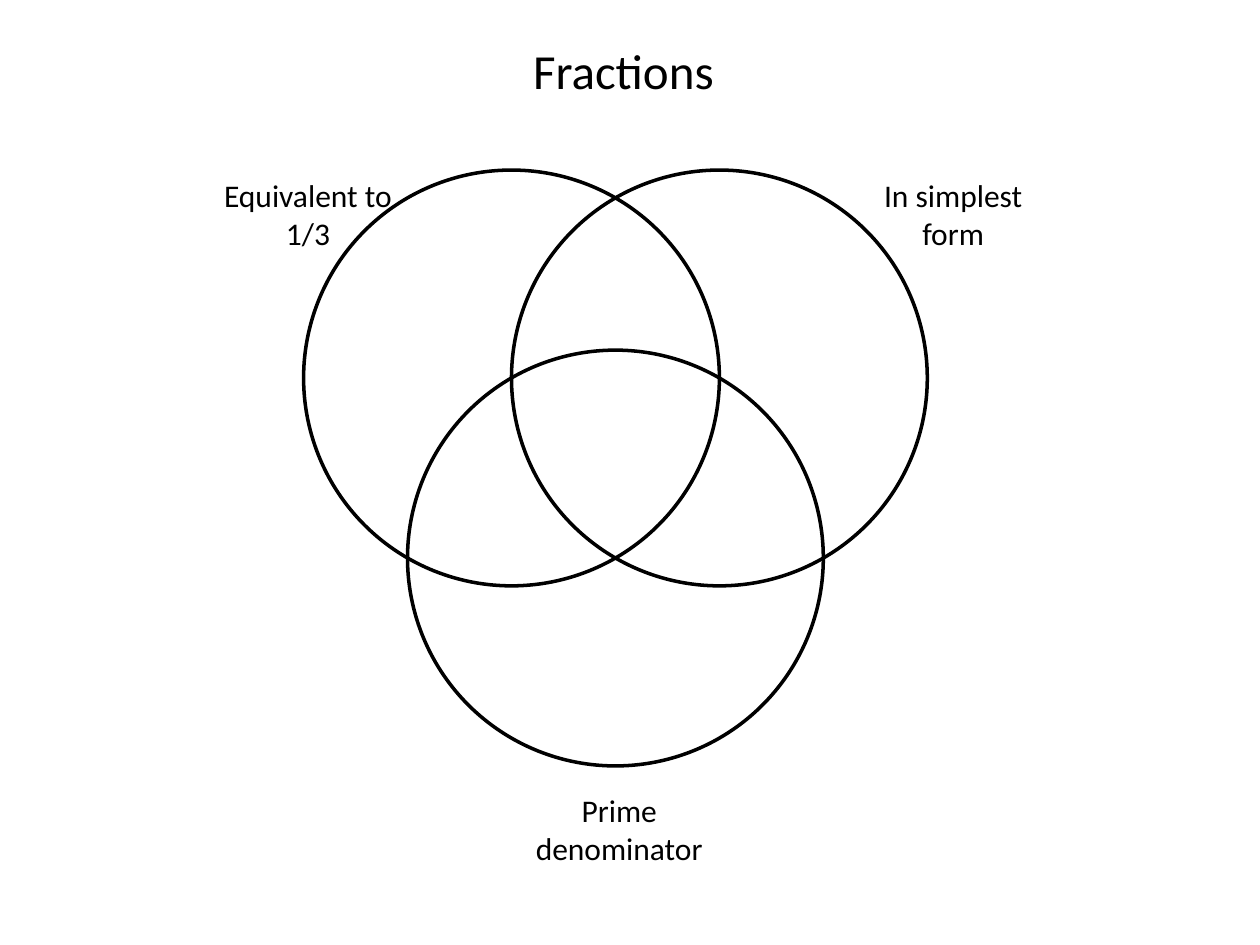
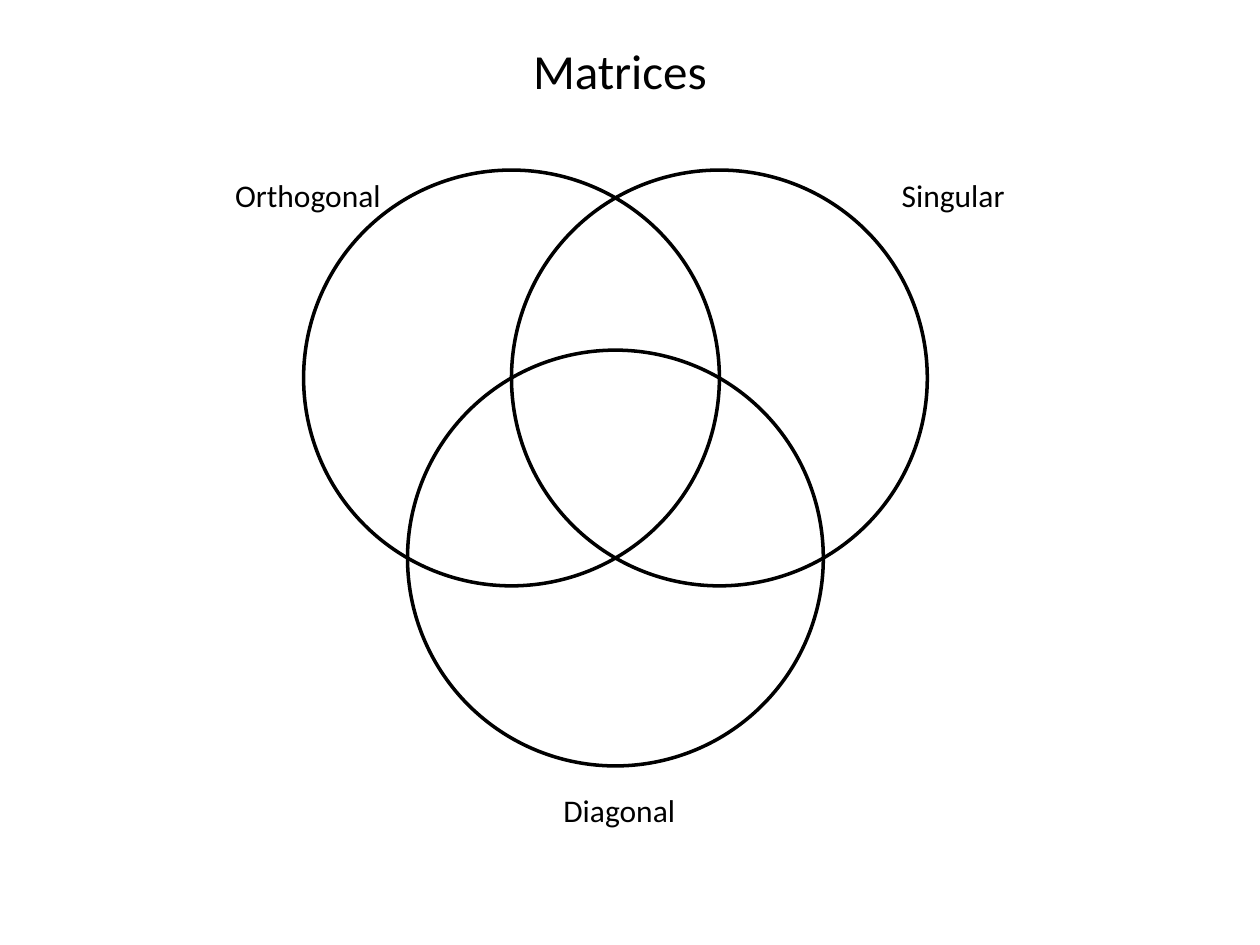
from dataclasses import dataclass
from math import sqrt

from pptx import Presentation
from pptx.dml.color import RGBColor
from pptx.enum import shapes, text
from pptx.util import Pt

DIAGRAMS = [
    {"title": "Fractions", "title_width": 118.8, "label_height": 51.1,
     "labels": ["Equivalent to 1/3", "In simplest form", "Prime denominator"]},
    {"title": "Matrices", "title_width": 115.2, "label_height": 29.1,
     "labels": ["Orthogonal", "Singular", "Diagonal"]},
]


@dataclass(frozen=True)
class Theme:
    ink: RGBColor = RGBColor(0, 0, 0)
    font: str = "Calibri"
    title_size: float = 28
    label_size: float = 18
    outline: float = 2


THEME = Theme()
RADIUS = 118.8
VENN_LEFT, VENN_TOP = 173.5, 97.2
CIRCLES = [
    (VENN_LEFT, VENN_TOP),
    (VENN_LEFT + RADIUS, VENN_TOP),
    (VENN_LEFT + RADIUS / 2, VENN_TOP + RADIUS * sqrt(3) / 2),
]
LABEL_WIDTH = 113
LABELS = [(119.5, VENN_TOP), (488.2, VENN_TOP), (297.4, 448.6)]
TITLE_LEFT, TITLE_TOP, TITLE_HEIGHT = 297.4, 19.5, 41.2


def place(sp, left, top, width, height):
    sp.left, sp.top, sp.width, sp.height = map(Pt, (left, top, width, height))


def write(sp, content, size, align, wrap=True):
    tf = sp.text_frame
    tf.word_wrap = wrap
    tf.auto_size = text.MSO_AUTO_SIZE.SHAPE_TO_FIT_TEXT
    tf.vertical_anchor = text.MSO_ANCHOR.TOP
    p = tf.paragraphs[0]
    p.alignment = align
    r = p.add_run()
    r.text = content
    r.font.name = THEME.font
    r.font.size = Pt(size)
    r.font.color.rgb = THEME.ink


def draw_circles(s):
    group = s.shapes.add_group_shape()
    for left, top in CIRCLES:
        sp = group.shapes.add_shape(
            shapes.MSO_SHAPE.OVAL, *map(Pt, (left, top, 2 * RADIUS, 2 * RADIUS)))
        sp.shadow.inherit = False
        sp.fill.background()
        sp.line.color.rgb = THEME.ink
        sp.line.width = Pt(THEME.outline)


def add_diagram(prs, diagram):
    s = prs.slides.add_slide(prs.slide_layouts[5])
    title = s.shapes.title
    place(title, TITLE_LEFT, TITLE_TOP, diagram["title_width"], TITLE_HEIGHT)
    write(title, diagram["title"], THEME.title_size, text.PP_ALIGN.LEFT, wrap=False)
    draw_circles(s)
    for (left, top), label in zip(LABELS, diagram["labels"]):
        box = s.shapes.add_textbox(
            *map(Pt, (left, top, LABEL_WIDTH, diagram["label_height"])))
        write(box, label, THEME.label_size, text.PP_ALIGN.CENTER)


def main():
    prs = Presentation()
    prs.slide_width, prs.slide_height = Pt(720), Pt(540)
    for diagram in DIAGRAMS:
        add_diagram(prs, diagram)
    prs.save("out.pptx")


if __name__ == "__main__":
    main()
